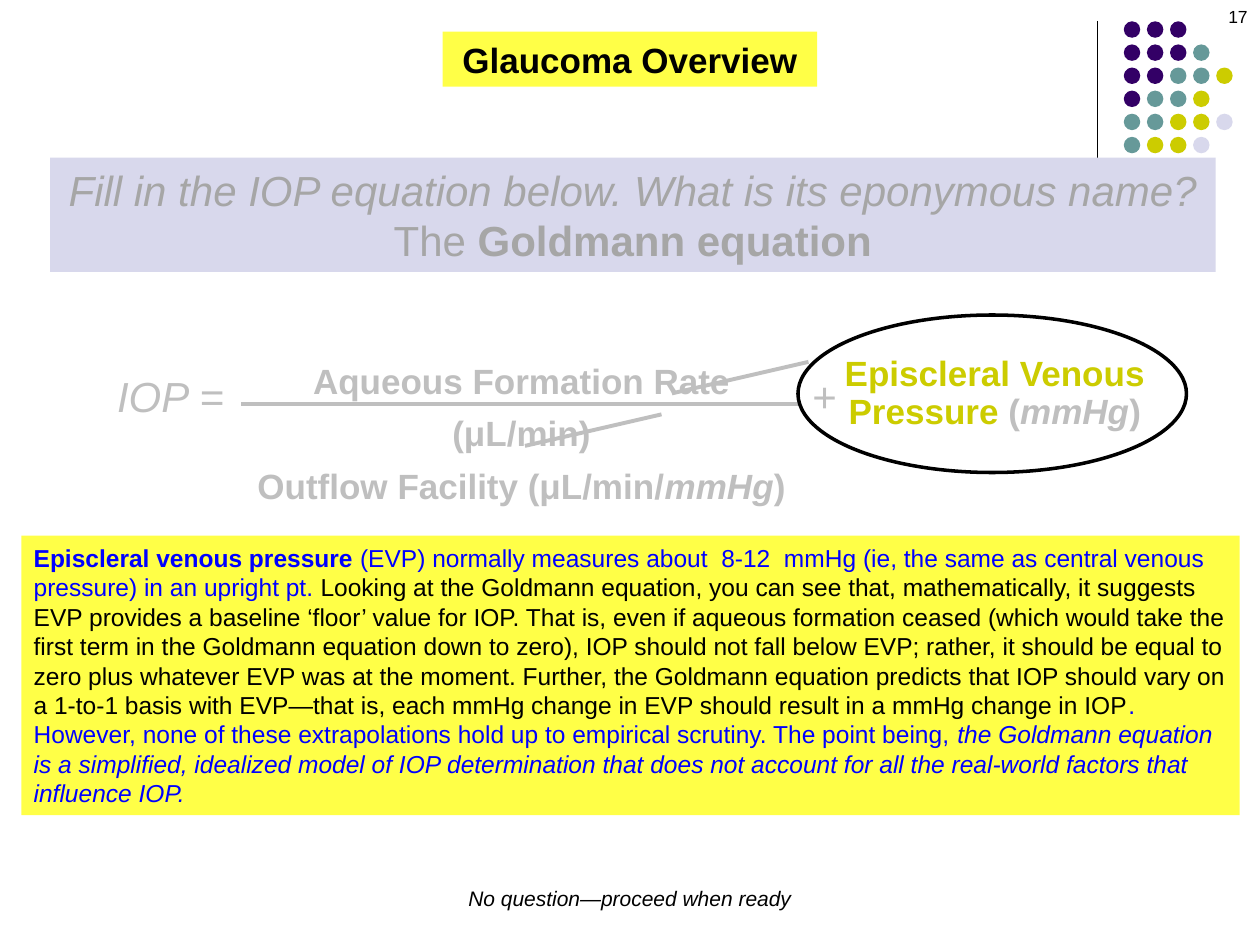
from lxml import etree
from pptx import Presentation
from pptx.dml.color import RGBColor
from pptx.enum.shapes import MSO_CONNECTOR, MSO_SHAPE
from pptx.enum.text import PP_ALIGN
from pptx.oxml.ns import qn
from pptx.util import Pt

LEFT, MID, RIGHT = PP_ALIGN.LEFT, PP_ALIGN.CENTER, PP_ALIGN.RIGHT
OVAL, RECT = MSO_SHAPE.OVAL, MSO_SHAPE.RECTANGLE
STRAIGHT = MSO_CONNECTOR.STRAIGHT

BLACK = RGBColor(0x00, 0x00, 0x00)
BLUE = RGBColor(0x00, 0x00, 0xFF)
SILVER = RGBColor(0xBF, 0xBF, 0xBF)
GRAY = RGBColor(0xA6, 0xA6, 0xA6)
YELLOW = RGBColor(0xFF, 0xFF, 0x47)
PURPLE = RGBColor(0x33, 0x00, 0x66)
TEAL = RGBColor(0x66, 0x99, 0x99)
OLIVE = RGBColor(0xCC, 0xCC, 0x00)
LILAC = RGBColor(0xD8, 0xD8, 0xEC)

FONT = "Arial"
HUES = {"P": PURPLE, "T": TEAL, "O": OLIVE, "L": LILAC}
DOTS = ["PPP", "PPPT", "PPTTO", "PTTO", "TTOOL", "TOOL"]


def add_shape(slide, kind, box, fill=None, line=None, width=1):
    shape = slide.shapes.add_shape(kind, *map(Pt, box))
    shape.shadow.inherit = False
    if fill is None:
        shape.fill.background()
    else:
        shape.fill.solid()
        shape.fill.fore_color.rgb = fill
    if line is None:
        shape.line.fill.background()
    else:
        shape.line.color.rgb = line
        shape.line.width = Pt(width)
    return shape


def add_line(slide, start, end, color, width):
    line = slide.shapes.add_connector(STRAIGHT, *map(Pt, start + end))
    line.line.color.rgb = color
    line.line.width = Pt(width)
    etree.SubElement(line._element.spPr, qn("a:effectLst"))


def add_text(slide, box, paras, size, color, fill=None, align=LEFT,
             bold=False, italic=False, wrap=False, space=None):
    """Each paragraph is a list of (text, changes to the format) runs."""
    if fill is None:
        shape = slide.shapes.add_textbox(*map(Pt, box))
    else:
        shape = add_shape(slide, RECT, box, fill)
    frame = shape.text_frame
    frame.word_wrap = wrap
    for i, runs in enumerate(paras):
        para = frame.paragraphs[0] if i == 0 else frame.add_paragraph()
        para.alignment = align
        if space:
            para.line_spacing = space
        for text, own in runs:
            run = para.add_run()
            run.text = text
            font = run.font
            font.name = FONT
            font.size = Pt(size)
            font.bold = own.get("bold", bold)
            font.italic = own.get("italic", italic)
            font.color.rgb = own.get("color", color)


def add_dots(slide):
    left, top, step, size = 642.2, 12.2, 13.2, 9.4
    for row, marks in enumerate(DOTS):
        for col, mark in enumerate(marks):
            box = (left + col * step, top + row * step, size, size)
            add_shape(slide, OVAL, box, HUES[mark])


def add_terms(slide):
    add_text(slide, (59.8, 208, 76.3, 36), [[("IOP =", {})]],
             24, SILVER, italic=True)
    add_text(slide, (132, 195.8, 332, 65),
             [[("Aqueous Formation Rate (μL/min)", {})],
              [("Outflow Facility (μL/min/", {}),
               ("mmHg", {"italic": True}), (")", {})]],
             20, SILVER, align=MID, bold=True, wrap=True, space=1.25)
    add_text(slide, (457.2, 208, 28.8, 36), [[("+", {})]], 24, SILVER)
    add_text(slide, (475.2, 200.2, 186.5, 50.4),
             [[("Episcleral Venous", {})],
              [("Pressure ", {}), ("(", {"color": SILVER}),
               ("mmHg", {"color": SILVER, "italic": True}),
               (")", {"color": SILVER})]],
             20, OLIVE, align=MID, bold=True, space=0.9)


def add_notes(slide):
    add_text(slide, (12.2, 306, 696.2, 159.8), [[
        ("Episcleral venous pressure", {"bold": True}),
        (" (EVP) normally measures about  8-12  mmHg (ie, the same as "
         "central venous pressure) in an upright pt. ", {}),
        ("Looking at the Goldmann equation, you can see that, "
         "mathematically, it suggests EVP provides a baseline ‘floor’ value "
         "for IOP. That is, even if aqueous formation ceased (which would "
         "take the first term in the Goldmann equation down to zero), IOP "
         "should not fall below EVP; rather, it should be equal to zero plus "
         "whatever EVP was at the moment. Further, the Goldmann equation "
         "predicts that IOP should vary on a 1-to-1 basis with EVP—that is, "
         "each mmHg change in EVP should result in a mmHg change in IOP",
         {"color": BLACK}),
        (". However, none of these extrapolations hold up to empirical "
         "scrutiny. The point being, ", {}),
        ("the Goldmann equation is a simplified, idealized model of IOP "
         "determination that does not account for all the real-world factors "
         "that influence IOP.", {"italic": True})]],
        14, BLUE, fill=YELLOW, wrap=True)


def main():
    deck = Presentation()
    deck.slide_width, deck.slide_height = Pt(720), Pt(540)
    slide = deck.slides.add_slide(deck.slide_layouts[6])

    # Corner rule and dots
    add_line(slide, (627, 12), (627, 132), BLACK, 0.75)
    add_dots(slide)

    # Equation and question
    add_terms(slide)
    add_text(slide, (28.6, 90, 666, 65.4),
             [[("Fill in the IOP equation below. What is its eponymous name?",
                {"italic": True})],
              [("The ", {}), ("Goldmann equation", {"bold": True})]],
             24, GRAY, fill=LILAC, align=MID)

    # Fraction bar and strokes through the units
    for start, end in [((138, 231), (456, 231)),
                       ((462, 206.8), (384, 224.8)),
                       ((378, 236.8), (300, 254.8))]:
        add_line(slide, start, end, SILVER, 2.25)

    # Page number, notes, title, ring and footer
    add_text(slide, (552, 0, 168, 36), [[("17", {})]], 10, BLACK,
             align=RIGHT, wrap=True)
    add_notes(slide)
    add_text(slide, (253, 18, 214, 31.5), [[("Glaucoma Overview", {})]],
             20, BLACK, fill=YELLOW, align=MID, bold=True)
    add_shape(slide, OVAL, (456, 180, 222, 90), line=BLACK, width=2)
    add_text(slide, (260, 502.6, 200, 21.6),
             [[("No question—proceed when ready", {})]],
             12, BLACK, align=MID, italic=True)

    deck.save("out.pptx")


if __name__ == "__main__":
    main()
